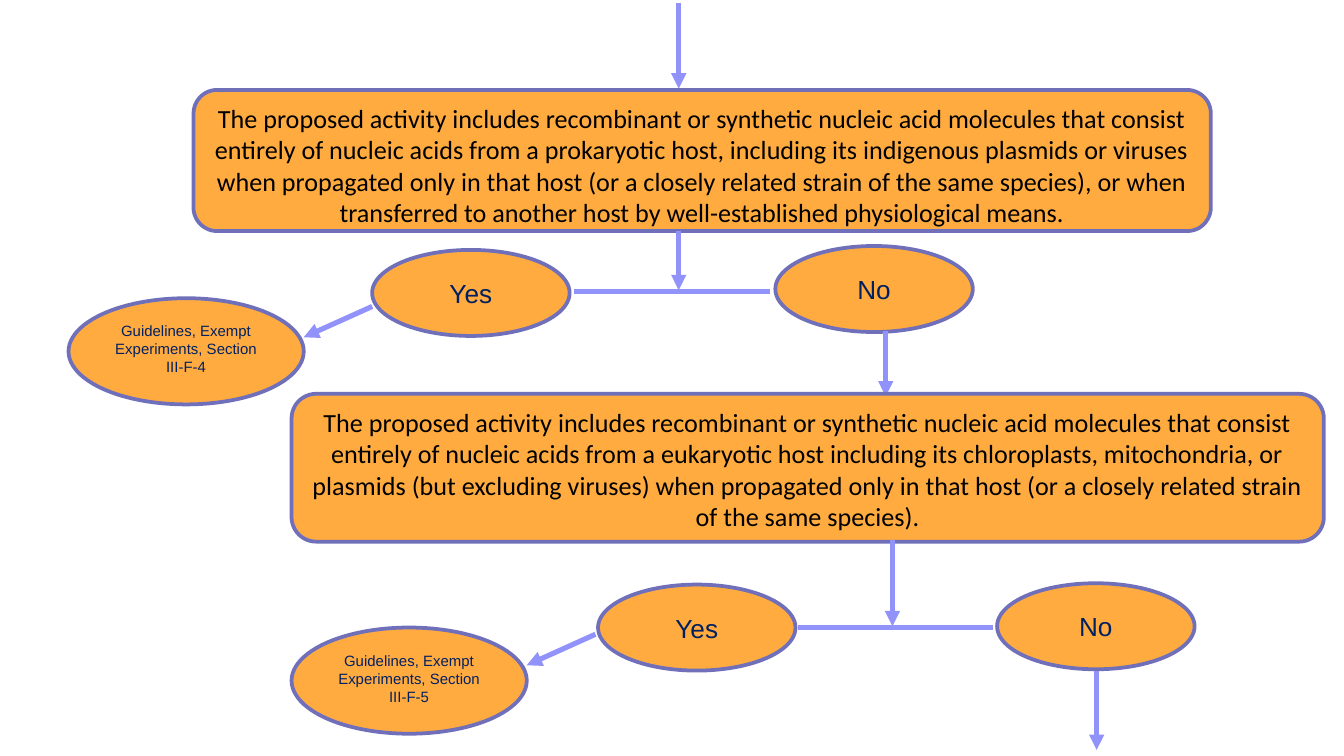
"""Build a decision flowchart slide for exempt nucleic acid experiments."""
from lxml import etree
from pptx import Presentation
from pptx.dml.color import RGBColor
from pptx.enum.shapes import MSO_CONNECTOR, MSO_SHAPE
from pptx.enum.text import MSO_ANCHOR, PP_ALIGN
from pptx.oxml.ns import qn
from pptx.util import Pt

ROUND, OVAL = MSO_SHAPE.ROUNDED_RECTANGLE, MSO_SHAPE.OVAL
STRAIGHT = MSO_CONNECTOR.STRAIGHT
TOP, MIDDLE = MSO_ANCHOR.TOP, MSO_ANCHOR.MIDDLE
CENTER = PP_ALIGN.CENTER
COLORS = {"fill": "FFAB40", "border": "6F6FBA", "arrow": "9292FB",
          "question": "000000", "answer": "002060"}
ANSWER_SIZE = (105.8, 46.1)
SECTION_SIZE = (126, 56.9)

prs = Presentation()
prs.slide_width, prs.slide_height = Pt(720), Pt(405)
s = prs.slides.add_slide(prs.slide_layouts[6])


def add_node(kind, box, text, size=14, font="Arial", color="answer", anchor=MIDDLE, bottom=2.9):
    sp = s.shapes.add_shape(kind, *[Pt(v) for v in box])
    sp.shadow.inherit = False
    sp.fill.solid()
    sp.fill.fore_color.rgb = RGBColor.from_string(COLORS["fill"])
    sp.line.color.rgb = RGBColor.from_string(COLORS["border"])
    sp.line.width = Pt(2)
    tf = sp.text_frame
    tf.word_wrap = True
    tf.vertical_anchor = anchor
    tf.margin_left = tf.margin_right = Pt(5)
    tf.margin_top, tf.margin_bottom = Pt(2.9), Pt(bottom)
    p = tf.paragraphs[0]
    p.alignment = CENTER
    r = p.add_run()
    r.text = text
    r.font.size = Pt(size)
    r.font.name = font
    r.font.color.rgb = RGBColor.from_string(COLORS[color])


def add_line(ends, arrow=True):
    cx = s.shapes.add_connector(STRAIGHT, *[Pt(v) for v in ends])
    cx.line.color.rgb = RGBColor.from_string(COLORS["arrow"])
    cx.line.width = Pt(2.75)
    if arrow:
        etree.SubElement(cx.line._get_or_add_ln(), qn("a:tailEnd"), type="triangle")
    etree.SubElement(cx._element.spPr, qn("a:effectLst"))


INTRO = ("The proposed activity includes recombinant or synthetic nucleic acid molecules "
         "that consist entirely of nucleic acids from a ")
steps = [
    {"question": "prokaryotic host, including its indigenous plasmids or viruses when propagated "
                 "only in that host (or a closely related strain of the same species), or when "
                 "transferred to another host by well-established physiological means.",
     "box": (103.7, 48.2, 545, 75.6), "section": "III-F-4",
     "yes": (199.4, 133.9), "no": (415.4, 131.8), "exempt": (36.7, 159.8),
     "branch": (307.4, 156.2, 412.6, 156.2),
     "arrows": [(363.6, 123.8, 363.6, 155.5), (199.4, 164.2, 162.7, 180.7),
                (474.5, 177.1, 474.5, 212.4)]},
    {"question": "eukaryotic host including its chloroplasts, mitochondria, or plasmids (but "
                 "excluding viruses) when propagated only in that host (or a closely related "
                 "strain of the same species).",
     "box": (156.2, 211, 553, 79.2), "section": "III-F-5",
     "yes": (320.4, 313.2), "no": (534.2, 312.5), "exempt": (156.2, 336.2),
     "branch": (427.7, 336.2, 532.1, 336.2),
     "arrows": [(478.1, 289.4, 478.1, 335.5), (319, 339.8, 282.2, 356.4),
                (587.5, 359.3, 587.5, 401.8)]},
]

add_line((363.6, 1.4, 363.6, 47.5))
for step in steps:
    add_node(ROUND, step["box"], INTRO + step["question"], font="Calibri",
             color="question", anchor=TOP)
    add_node(OVAL, step["yes"] + ANSWER_SIZE, "Yes")
    add_node(OVAL, step["no"] + ANSWER_SIZE, "No")
    add_node(OVAL, step["exempt"] + SECTION_SIZE,
             f"Guidelines, Exempt Experiments, Section {step['section']}", size=8, bottom=5.5)
    add_line(step["branch"], arrow=False)
    for ends in step["arrows"]:
        add_line(ends)

prs.save("out.pptx")
